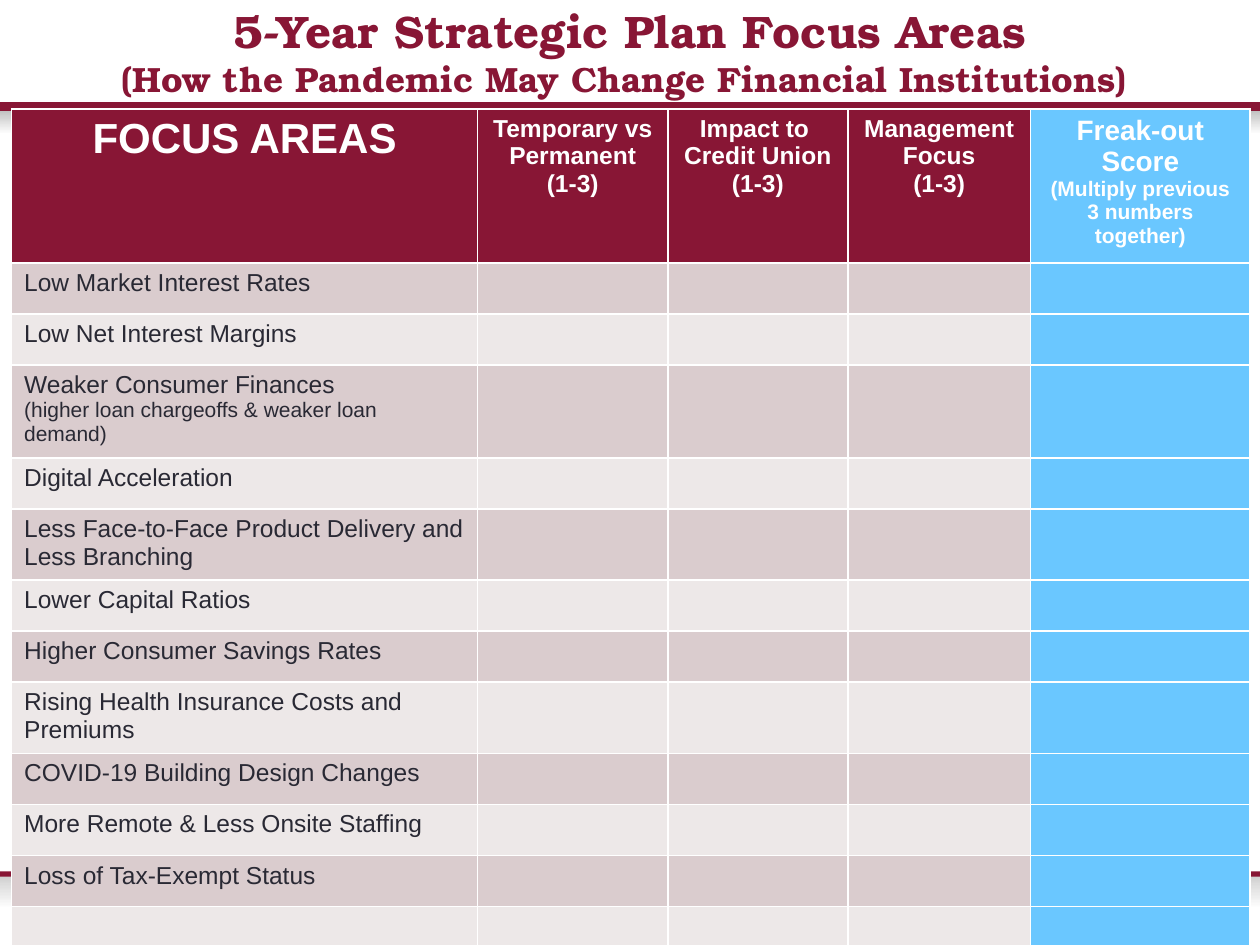
from pptx import Presentation
from pptx.dml.color import RGBColor
from pptx.enum.shapes import MSO_SHAPE
from pptx.enum.text import MSO_ANCHOR, PP_ALIGN
from pptx.util import Pt

RECTANGLE = MSO_SHAPE.RECTANGLE
MIDDLE = MSO_ANCHOR.MIDDLE
CENTER, LEFT = PP_ALIGN.CENTER, PP_ALIGN.LEFT

THEME = {
    "maroon": "881635", "sky": "6AC7FF", "white": "FFFFFF", "ink": "292934",
    "bands": ("DACCCE", "EDE8E8"),
    "title_font": "TeX Gyre Bonum", "body_font": "Arial",
    "title": 26, "subtitle": 20, "heading": 24, "score": 16, "body": 14, "note": 12,
}

TITLE = [("5-Year Strategic Plan Focus Areas", "title"),
         ("(How the Pandemic May Change Financial Institutions) ", "subtitle")]
HEADERS = [
    [("FOCUS AREAS", "heading")],
    [("Temporary vs Permanent", "body"), ("(1-3)", "body")],
    [("Impact to ", "body"), ("Credit Union", "body"), ("(1-3)", "body")],
    [("Management Focus", "body"), ("(1-3)", "body")],
    [("Freak-out Score", "score"), ("(Multiply previous 3 numbers together)", "note")],
]
ROW, TWO_LINES, THREE_LINES = 29.15, 40.6, 53.1
FOCUS_AREAS = [
    ("Low Market Interest Rates", "", ROW),
    ("Low Net Interest Margins", "", ROW),
    ("Weaker Consumer Finances", "(higher loan chargeoffs & weaker loan demand)", THREE_LINES),
    ("Digital Acceleration", "", ROW),
    ("Less Face-to-Face Product Delivery and Less Branching", "", TWO_LINES),
    ("Lower Capital Ratios", "", ROW),
    ("Higher Consumer Savings Rates", "", ROW),
    ("Rising Health Insurance Costs and Premiums", "", TWO_LINES),
    ("COVID-19 Building Design Changes", "", ROW),
    ("More Remote & Less Onsite Staffing", "", ROW),
    ("Loss of Tax-Exempt Status", "", ROW),
    ("", "", ROW),
]
COLUMN_WIDTHS = [266.3, 108.8, 102.8, 104.4, 125.5]
HEADER_HEIGHT = 88
TABLE_LEFT, TABLE_TOP = 6.6, 62.2
SLIDE_WIDTH, SLIDE_HEIGHT = 720, 540
SHADOWS = [(500, 19.4, "CFCFCF"), (63, 13.7, "C0C0C0")]
RULES = [(498, 3), (58.4, 5)]


def add_run(paragraph, text, size, color, font, bold):
    run = paragraph.add_run()
    run.text = text
    run.font.name = THEME[font]
    run.font.size = Pt(THEME[size])
    run.font.bold = bold
    run.font.color.rgb = RGBColor.from_string(THEME[color])


def add_band(slide, top, height):
    shape = slide.shapes.add_shape(RECTANGLE, 0, Pt(top), Pt(SLIDE_WIDTH), Pt(height))
    shape.shadow.inherit = False
    shape.line.fill.background()
    return shape


def add_backdrop(slide):
    for top, height, gray in SHADOWS:
        fill = add_band(slide, top, height).fill
        fill.gradient()
        fill.gradient_angle = 270
        for stop, color, position in zip(fill.gradient_stops, (gray, THEME["white"]), (0, 1)):
            stop.color.rgb = RGBColor.from_string(color)
            stop.position = position
    for top, height in RULES:
        fill = add_band(slide, top, height).fill
        fill.solid()
        fill.fore_color.rgb = RGBColor.from_string(THEME["maroon"])


def fill_cell(cell, background, lines, alignment, color, bold):
    cell.fill.solid()
    cell.fill.fore_color.rgb = RGBColor.from_string(background)
    frame = cell.text_frame
    for index, (text, size) in enumerate(lines):
        paragraph = frame.add_paragraph() if index else frame.paragraphs[0]
        paragraph.alignment = alignment
        add_run(paragraph, text, size, color, "body_font", bold)


def add_focus_table(slide):
    heights = [HEADER_HEIGHT] + [height for _, _, height in FOCUS_AREAS]
    table = slide.shapes.add_table(
        len(heights), len(COLUMN_WIDTHS), Pt(TABLE_LEFT), Pt(TABLE_TOP),
        Pt(sum(COLUMN_WIDTHS)), Pt(sum(heights))).table
    for column, width in zip(table.columns, COLUMN_WIDTHS):
        column.width = Pt(width)
    for row, height in zip(table.rows, heights):
        row.height = Pt(height)

    score_column = len(COLUMN_WIDTHS) - 1
    for column, lines in enumerate(HEADERS):
        background = THEME["sky" if column == score_column else "maroon"]
        fill_cell(table.cell(0, column), background, lines, CENTER, "white", True)
    for index, (area, note, _) in enumerate(FOCUS_AREAS):
        area_lines = [(text, size) for text, size in ((area, "body"), (note, "note")) if text]
        for column in range(len(COLUMN_WIDTHS)):
            background = THEME["sky"] if column == score_column else THEME["bands"][index % 2]
            lines = [] if column else area_lines
            fill_cell(table.cell(index + 1, column), background, lines, LEFT, "ink", False)


def add_title(slide):
    frame = slide.shapes.add_textbox(Pt(12.2), Pt(-2.2), Pt(696.2), Pt(63.4)).text_frame
    frame.word_wrap = True
    frame.vertical_anchor = MIDDLE
    paragraph = frame.paragraphs[0]
    paragraph.alignment = CENTER
    for index, (text, size) in enumerate(TITLE):
        if index:
            paragraph.add_line_break()
        add_run(paragraph, text, size, "maroon", "title_font", True)


def main():
    presentation = Presentation()
    presentation.slide_width = Pt(SLIDE_WIDTH)
    presentation.slide_height = Pt(SLIDE_HEIGHT)
    slide = presentation.slides.add_slide(presentation.slide_layouts[6])
    add_backdrop(slide)
    add_focus_table(slide)
    add_title(slide)
    presentation.save("out.pptx")


if __name__ == "__main__":
    main()
